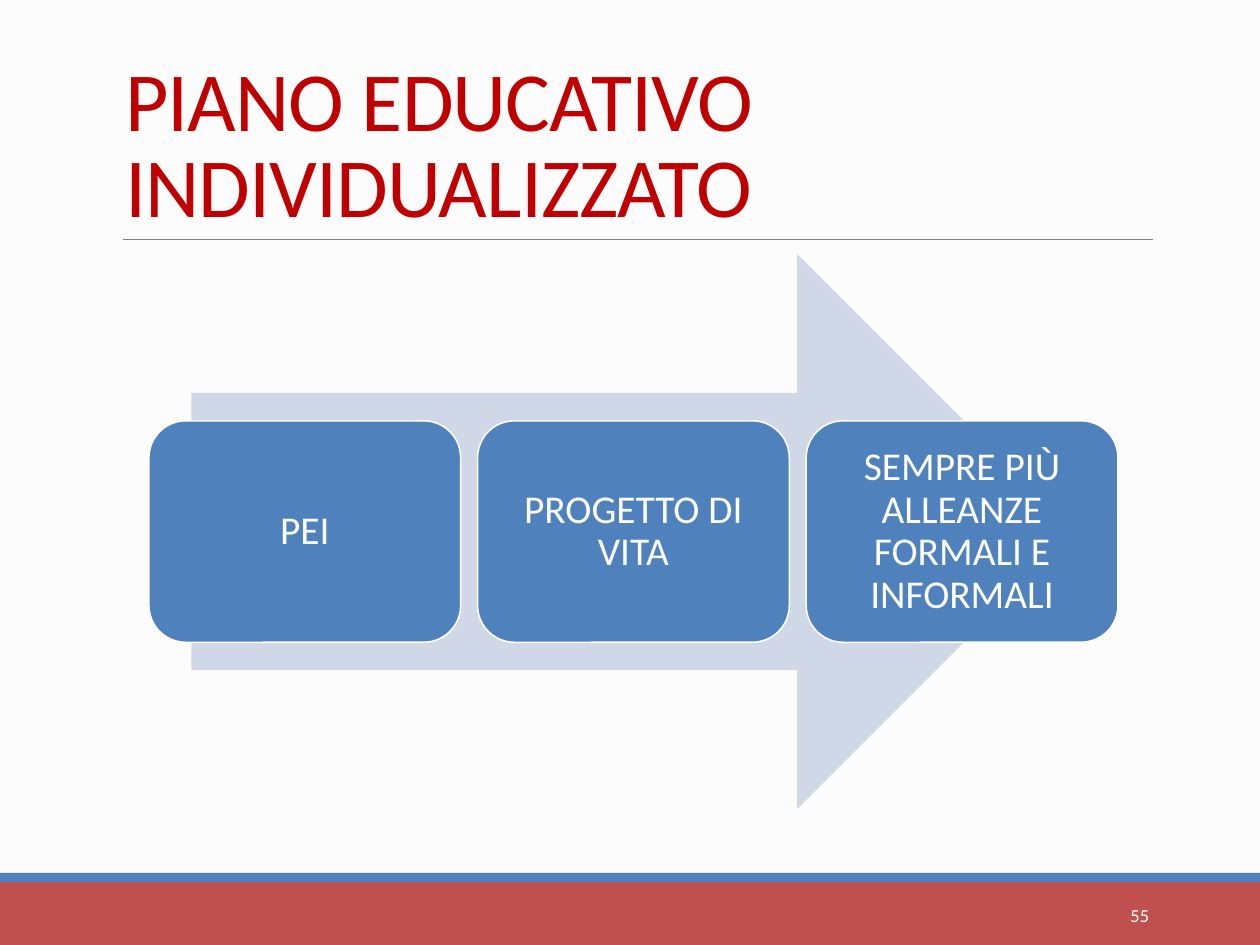
"""Build the individual education plan slide with its three-step arrow."""
from dataclasses import dataclass

from lxml.etree import SubElement
from pptx import Presentation
from pptx.dml.color import RGBColor
from pptx.enum.shapes import MSO_CONNECTOR, MSO_SHAPE
from pptx.enum.text import MSO_ANCHOR, PP_ALIGN
from pptx.oxml.ns import qn
from pptx.shapes.autoshape import Shape
from pptx.slide import Slide
from pptx.util import Pt

COLORS = {
    "background": "FCFCFC",
    "footer": "C0504D",
    "blue": "4F81BD",
    "rule": "808080",
    "title": "C00000",
    "arrow": "D0D8E8",
    "white": "FFFFFF",
}
FONT = "Calibri"
STEPS = ["PEI", "PROGETTO DI VITA", "SEMPRE PIÙ ALLEANZE FORMALI E INFORMALI"]
STEP_LEFT, STEP_PITCH = 121, 267.1


@dataclass(frozen=True)
class Box:
    left: float
    top: float
    width: float
    height: float

    def lengths(self) -> tuple[Pt, Pt, Pt, Pt]:
        return Pt(self.left), Pt(self.top), Pt(self.width), Pt(self.height)


@dataclass(frozen=True)
class Label:
    text: str
    size: float
    color: str
    align: PP_ALIGN
    anchor: MSO_ANCHOR
    inset_x: float
    inset_y: float
    line_spacing: float = 1.0
    tracking: int = 0


def rgb(name: str) -> RGBColor:
    return RGBColor.from_string(COLORS[name])


def add_block(slide: Slide, kind: MSO_SHAPE, box: Box, fill: str) -> Shape:
    sp = slide.shapes.add_shape(kind, *box.lengths())
    sp.shadow.inherit = False
    sp.fill.solid()
    sp.fill.fore_color.rgb = rgb(fill)
    sp.line.fill.background()
    return sp


def write(sp: Shape, label: Label) -> None:
    tf = sp.text_frame
    tf.word_wrap = True
    tf.vertical_anchor = label.anchor
    tf.margin_left = tf.margin_right = Pt(label.inset_x)
    tf.margin_top = tf.margin_bottom = Pt(label.inset_y)
    p = tf.paragraphs[0]
    p.alignment = label.align
    p.line_spacing = label.line_spacing
    p.font.name = FONT
    p.font.size = Pt(label.size)
    p.font.color.rgb = rgb(label.color)
    r = p.add_run()
    r.text = label.text
    if label.tracking:
        r.font._element.set("spc", str(label.tracking))


def add_label(slide: Slide, box: Box, label: Label) -> None:
    write(slide.shapes.add_textbox(*box.lengths()), label)


def add_rule(slide: Slide, left: float, right: float, y: float) -> None:
    rule = slide.shapes.add_connector(
        MSO_CONNECTOR.STRAIGHT, Pt(left), Pt(y), Pt(right), Pt(y))
    rule.line.color.rgb = rgb("rule")
    rule.line.width = Pt(0.5)
    SubElement(rule._element.spPr, qn("a:effectLst"))


def add_step(slide: Slide, index: int, text: str) -> None:
    box = Box(STEP_LEFT + index * STEP_PITCH, 342, 253.4, 180)
    sp = add_block(slide, MSO_SHAPE.ROUNDED_RECTANGLE, box, "blue")
    sp.line.color.rgb = rgb("white")
    sp.line.width = Pt(1.25)
    write(sp, Label(text, 32, "white", PP_ALIGN.CENTER, MSO_ANCHOR.MIDDLE,
                    9.4, 9.4, line_spacing=0.9))


def main() -> None:
    prs = Presentation()
    prs.slide_width, prs.slide_height = Pt(1024), Pt(768)
    slide = prs.slides.add_slide(prs.slide_layouts[6])
    slide.background.fill.solid()
    slide.background.fill.fore_color.rgb = rgb("background")

    add_block(slide, MSO_SHAPE.RECTANGLE, Box(0, 716.8, 1024, 51.2), "footer")
    add_block(slide, MSO_SHAPE.RECTANGLE, Box(0, 709.4, 1024, 7.4), "blue")
    add_rule(slide, 100, 937.4, 194.4)
    add_label(slide, Box(92.2, 32.4, 844.6, 162.7),
              Label("PIANO EDUCATIVO INDIVIDUALIZZATO", 68.3, "title",
                    PP_ALIGN.LEFT, MSO_ANCHOR.BOTTOM, 9.4, 4.7,
                    line_spacing=0.85, tracking=-70))

    add_block(slide, MSO_SHAPE.RIGHT_ARROW, Box(155.5, 206.6, 717.8, 450.7), "arrow")
    for index, text in enumerate(STEPS):
        add_step(slide, index, text)

    add_label(slide, Box(831.6, 723.6, 110.2, 41),
              Label("55", 14.9, "white", PP_ALIGN.RIGHT, MSO_ANCHOR.MIDDLE, 8, 4))
    prs.save("out.pptx")


if __name__ == "__main__":
    main()
